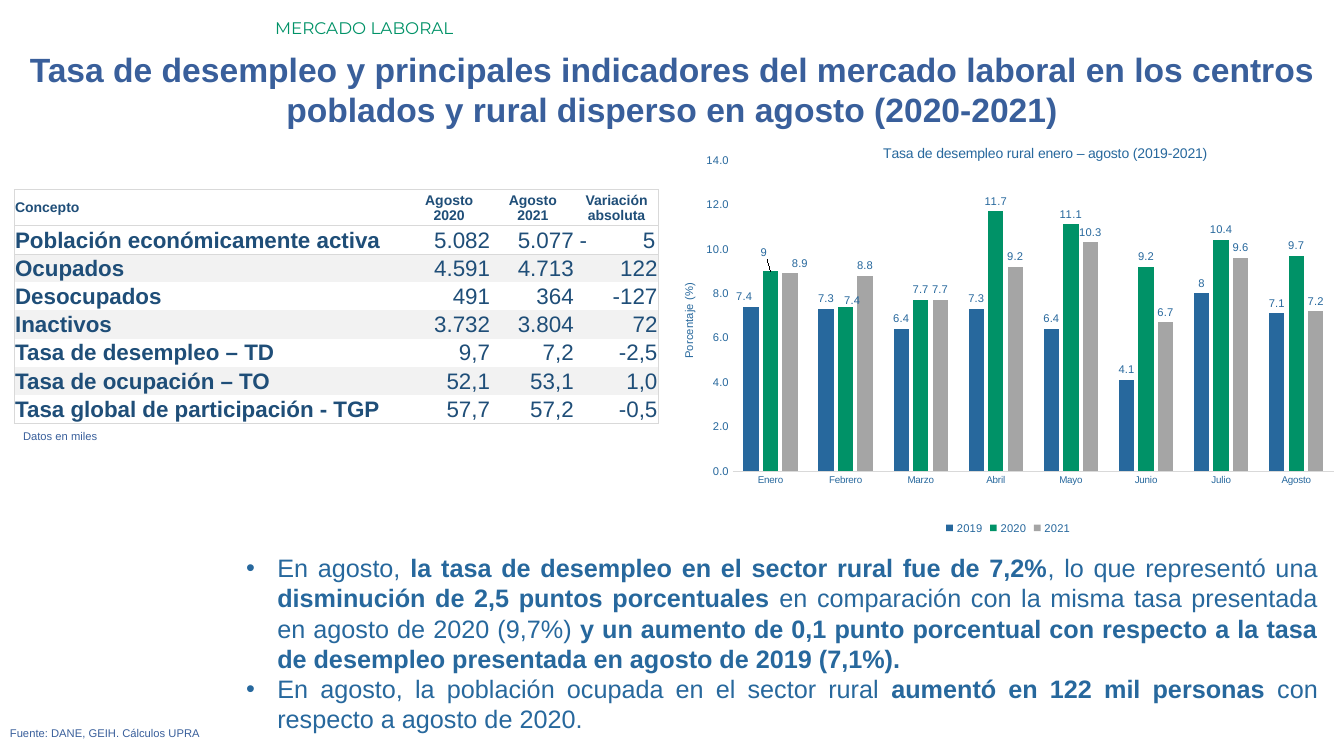
import pptx
import pptx.chart.data
import pptx.dml.color
import pptx.enum.chart
import pptx.enum.text
import pptx.oxml
import pptx.oxml.ns
import pptx.util
from lxml import etree
from pptx.util import Inches

HUES = {"green": "009267", "title": "395F9B", "blue": "27689D", "navy": "1F4E78",
        "gray": "A5A5A5", "rule": "D9D9D9", "band": "F2F2F2", "white": "FFFFFF"}
FACE = "Arial"

TITLE = ("Tasa de desempleo y principales indicadores del mercado laboral "
         "en los centros poblados y rural disperso en agosto (2020-2021)")
# text, box, size, face, colour
LABELS = [
    ("MERCADO LABORAL", (2.63, 0.13, 10.7, 0.3), 12, "Montserrat", "green"),
    ("Fuente: DANE, GEIH. Cálculos UPRA", (0, 7.16, 12.91, 0.24), 8, FACE, "title"),
    ("Datos en miles", (0.13, 4.21, 6.25, 0.24), 8, FACE, "title"),
]
# every second piece is bold
POINTS = [
    ("En agosto, ", "la tasa de desempleo en el sector rural fue de 7,2%",
     ", lo que representó una ", "disminución de 2,5 puntos porcentuales",
     " en comparación con la misma tasa presentada en agosto de 2020 (9,7%) ",
     "y un aumento de 0,1 punto porcentual con respecto a la tasa de desempleo "
     "presentada en agosto de 2019 (7,1%)."),
    ("En agosto, la población ocupada en el sector rural ",
     "aumentó en 122 mil personas ", "con respecto a agosto de 2020."),
]
ROWS = [
    ("Concepto", "Agosto 2020", "Agosto 2021", "Variación absoluta"),
    ("Población económicamente activa", "5.082", "5.077", "-\t5"),
    ("Ocupados", "4.591", "4.713", "122"),
    ("Desocupados", "491", "364", "-127"),
    ("Inactivos", "3.732", "3.804", "72"),
    ("Tasa de desempleo – TD", "9,7", "7,2", "-2,5"),
    ("Tasa de ocupación – TO", "52,1", "53,1", "1,0"),
    ("Tasa global de participación - TGP", "57,7", "57,2", "-0,5"),
]
WIDTHS = [3.9, 0.83, 0.83, 0.83]
HEAD_H, ROW_H = 0.36, 0.28
MONTHS = ["Enero", "Febrero", "Marzo", "Abril", "Mayo", "Junio", "Julio", "Agosto"]
SERIES = [
    ("2019", "blue", (7.4, 7.3, 6.4, 7.3, 6.4, 4.1, 8, 7.1)),
    ("2020", "green", (9, 7.4, 7.7, 11.7, 11.1, 9.2, 10.4, 9.7)),
    ("2021", "gray", (8.9, 8.8, 7.7, 9.2, 10.3, 6.7, 9.6, 7.2)),
]
# (series, month): label offset as a share of the chart
SHIFTS = {(0, 0): (-0.01, 0), (1, 0): (-0.01, -0.02),
          (1, 1): (0.01, 0.01), (2, 0): (0.015, 0)}

ALIGN = pptx.enum.text.PP_ALIGN
MID = pptx.enum.text.MSO_ANCHOR.MIDDLE
CHART = pptx.enum.chart
qn = pptx.oxml.ns.qn


def rgb(hue):
    return pptx.dml.color.RGBColor.from_string(HUES[hue])


def style(font, size, hue, bold=False, face=FACE):
    font.size, font.bold, font.name = pptx.util.Pt(size), bold, face
    font.color.rgb = rgb(hue)


def place(shape, box):
    shape.left, shape.top, shape.width, shape.height = map(Inches, box)


def border(cell, sides):
    props = cell._tc.get_or_add_tcPr()
    for side in "LRTB":
        if side in sides:
            line = etree.SubElement(props, qn("a:ln" + side), w="6350")
            fill = etree.SubElement(line, qn("a:solidFill"))
            etree.SubElement(fill, qn("a:srgbClr"), val=HUES["rule"])


def layout(node, index, **parts):
    """Give a chart part a manual layout."""
    spot = node.find(qn("c:layout"))
    if spot is None:
        spot = etree.Element(qn("c:layout"))
        node.insert(index, spot)
    manual = etree.SubElement(spot, qn("c:manualLayout"))
    for name, value in parts.items():
        etree.SubElement(manual, qn("c:" + name), val=str(value))


def add_points(body):
    place(body, (2.34, 5.43, 10.83, 1.92))
    frame = body.text_frame
    frame.auto_size = pptx.enum.text.MSO_AUTO_SIZE.NONE
    for i, pieces in enumerate(POINTS):
        para = frame.add_paragraph() if i else frame.paragraphs[0]
        para.alignment, para.space_before = ALIGN.JUSTIFY, 0
        props = para._p.get_or_add_pPr()
        props.set("marL", str(Inches(0.31)))
        props.set("indent", str(-Inches(0.31)))
        etree.SubElement(props, qn("a:buChar"), char="•")
        for j, piece in enumerate(pieces):
            run = para.add_run()
            run.text = piece
            style(run.font, 18, "blue", j % 2 == 1)


def add_grid(slide):
    high = HEAD_H + ROW_H * (len(ROWS) - 1)
    grid = slide.shapes.add_table(len(ROWS), len(WIDTHS), Inches(0.14), Inches(1.88),
                                  Inches(sum(WIDTHS)), Inches(high)).table
    grid.first_row = grid.horz_banding = False
    grid._tbl.tblPr[0].text = "{2D5ABB26-0587-4C30-8999-92F81FD0307C}"
    for col, width in zip(grid.columns, WIDTHS):
        col.width = Inches(width)
    last = len(WIDTHS) - 1
    for r, row in enumerate(ROWS):
        grid.rows[r].height = Inches(ROW_H if r else HEAD_H)
        for c, text in enumerate(row):
            cell = grid.cell(r, c)
            cell.margin_left = cell.margin_right = cell.margin_top = Inches(0.01)
            cell.margin_bottom = 0
            cell.vertical_anchor = MID
            border(cell, ("L" if c == 0 else "") + ("R" if c == last else "")
                   + ("T" if r == 0 else "")
                   + ("B" if r in (0, 1, len(ROWS) - 1) else ""))
            cell.fill.solid()
            cell.fill.fore_color.rgb = rgb("band" if r and r % 2 == 0 else "white")
            cell.text = text
            para = cell.text_frame.paragraphs[0]
            if "\t" in text:
                cell.margin_left = Inches(0.05)
                tabs = etree.SubElement(para._p.get_or_add_pPr(), qn("a:tabLst"))
                etree.SubElement(tabs, qn("a:tab"), pos=str(Inches(0.75)), algn="r")
            elif c:
                para.alignment = ALIGN.RIGHT if r else ALIGN.CENTER
            style(para.font, 16 if r else 10, "navy", r == 0 or c == 0)


def add_rates(slide):
    data = pptx.chart.data.CategoryChartData()
    data.categories = MONTHS
    for name, _, values in SERIES:
        data.add_series(name, values)
    chart = slide.shapes.add_chart(
        CHART.XL_CHART_TYPE.COLUMN_CLUSTERED, Inches(6.67), Inches(1.28),
        Inches(6.66), Inches(4.06), data).chart
    style(chart.font, 8, "blue")
    chart.has_title = chart.has_legend = True
    value, months = chart.value_axis, chart.category_axis
    value.has_title = True
    for title, text, size, x, y in (
            (chart.chart_title, "Tasa de desempleo rural enero – agosto (2019-2021)",
             10, 0.31, 0.03),
            (value.axis_title, "Porcentaje (%)", 8, 0.01, 0.37)):
        title.text_frame.text = text
        style(title.text_frame.paragraphs[0].font, size, "blue")
        layout(title._element, 1, xMode="edge", yMode="edge", x=x, y=y)
    value.axis_title.text_frame._txBody.bodyPr.set("rot", "-5400000")

    chart.legend.position = CHART.XL_LEGEND_POSITION.BOTTOM
    chart.legend.include_in_layout = False
    style(chart.legend.font, 8, "blue")
    for axis, size in ((value, 8), (months, 7)):
        axis.major_tick_mark = axis.minor_tick_mark = CHART.XL_TICK_MARK.NONE
        axis.has_major_gridlines = False
        style(axis.tick_labels.font, size, "blue")
    value.minimum_scale, value.maximum_scale, value.major_unit = 0, 14, 2
    value.tick_labels.number_format = "#,##0.0"
    value.tick_labels.number_format_is_linked = False
    value.format.line.fill.background()
    months.format.line.color.rgb = rgb("rule")
    months.format.line.width = pptx.util.Pt(0.75)

    plot = chart.plots[0]
    plot.gap_width, plot.overlap, plot.vary_by_categories = 136, -27, False
    layout(chart._chartSpace.chart.plotArea, 0, layoutTarget="inner", xMode="edge",
           yMode="edge", x=0.09, y=0.076, w=0.895, h=0.76)
    above = CHART.XL_LABEL_POSITION.OUTSIDE_END
    for bars, (_, hue, _) in zip(plot.series, SERIES):
        bars.format.fill.solid()
        bars.format.fill.fore_color.rgb = rgb(hue)
        bars.data_labels.show_value = True
        bars.data_labels.position = above
        style(bars.data_labels.font, 8, "blue")
    for (s, m), (x, y) in SHIFTS.items():
        label = plot.series[s].points[m].data_label
        style(label.font, 8, "blue")
        label.position = above
        layout(label._get_or_add_dLbl(), 1, x=x, y=y)


def main():
    deck = pptx.Presentation()
    deck.slide_width, deck.slide_height = Inches(13.33), Inches(7.5)
    slide = deck.slides.add_slide(deck.slide_layouts[1])
    title, body = slide.placeholders
    place(title, (0, 0.43, 13.33, 0.91))
    title.text_frame.text = TITLE
    title.text_frame.vertical_anchor = MID
    style(title.text_frame.paragraphs[0].font, 24, "title", True)
    for text, box, size, face, hue in LABELS:
        frame = slide.shapes.add_textbox(*map(Inches, box)).text_frame
        frame.word_wrap = True
        frame.text = text
        style(frame.paragraphs[0].font, size, hue, face=face)
    add_points(body)
    add_grid(slide)
    add_rates(slide)
    deck.save("out.pptx")


if __name__ == "__main__":
    main()
